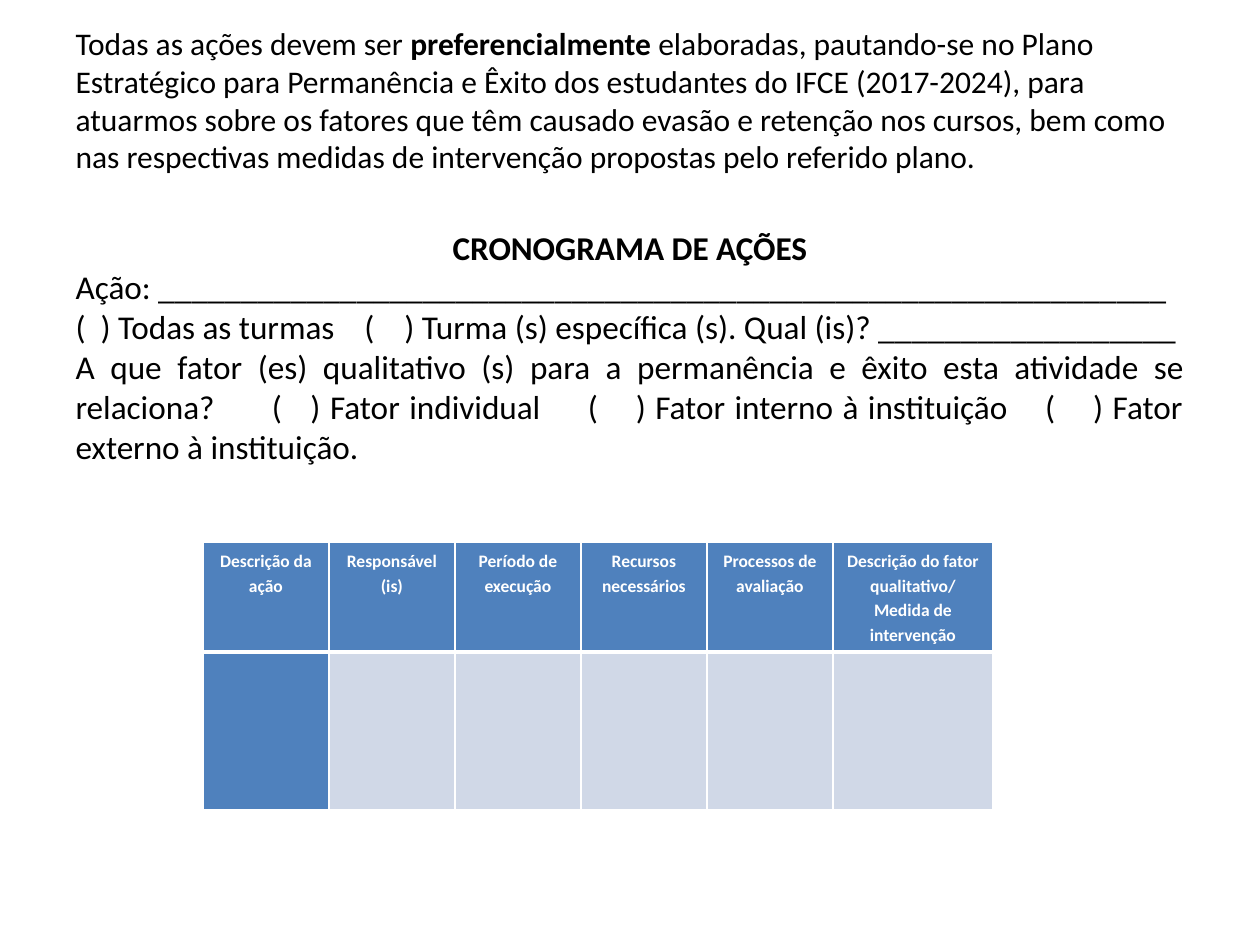
from dataclasses import dataclass

from lxml.etree import SubElement
from pptx import Presentation
from pptx.dml.color import RGBColor
from pptx.enum.text import MSO_ANCHOR as Anchor, MSO_AUTO_SIZE as AutoSize, PP_ALIGN as Align
from pptx.oxml.ns import qn
from pptx.util import Inches, Pt


@dataclass(frozen=True)
class Theme:
    font: str = "Calibri"
    text: str = "000000"
    light: str = "FFFFFF"
    header: str = "4F81BD"
    band: str = "D0D8E7"
    intro_size: int = 18
    form_size: int = 19
    table_size: int = 10
    thin: float = 0.96
    thick: float = 3


THEME = Theme()
WIDTH, HEIGHT = Inches(10), Inches(7.5)
MARGIN = 0.05  # share of the slide's width

INTRO = [
    ("Todas as ações devem ser ", False),
    ("preferencialmente", True),
    (" elaboradas, pautando-se no Plano Estratégico para Permanência e Êxito dos "
     "estudantes do IFCE (2017-2024), para atuarmos sobre os fatores que têm causado "
     "evasão e retenção nos cursos, bem como nas respectivas medidas de intervenção "
     "propostas pelo referido plano.", False),
]
FORM = [
    (Align.CENTER, "CRONOGRAMA DE AÇÕES", True),
    (Align.LEFT, "Ação: " + "_" * 61, False),
    (Align.LEFT, "(  ) Todas as turmas    (    ) Turma (s) específica (s). Qual (is)? "
     + "_" * 18, False),
    (Align.JUSTIFY, "A que fator (es) qualitativo (s) para a permanência e êxito esta "
     "atividade se relaciona?      (   ) Fator individual     (    ) Fator interno à "
     "instituição    (    ) Fator externo à instituição.", False),
]
HEADINGS = [
    "Descrição da ação", "Responsável (is)", "Período de execução",
    "Recursos necessários", "Processos de avaliação",
    "Descrição do fator qualitativo/ Medida de intervenção",
]
COLUMN_WIDTHS = [1] * 5 + [1.27]
ROW_HEIGHTS = [0.87, 1.25]


def add_span(para, text, size, color, bold=False):
    span = para.add_run()
    span.text = text
    font = span.font
    font.name, font.size, font.bold = THEME.font, Pt(size), bold
    font.color.rgb = RGBColor.from_string(color)


def place(box, top, height, anchor):
    """Put a placeholder between the margins; top and height are shares of the slide."""
    box.left, box.width = int(WIDTH * MARGIN), int(WIDTH * (1 - 2 * MARGIN))
    box.top, box.height = int(HEIGHT * top), int(HEIGHT * height)
    frame = box.text_frame
    frame.word_wrap, frame.auto_size = True, AutoSize.NONE
    frame.vertical_anchor = anchor
    return frame


def remove_bullet(para):
    properties = para._p.get_or_add_pPr()
    properties.set("marL", "0")
    properties.set("indent", "0")
    SubElement(properties, qn("a:buNone"))


def fill_intro(box):
    frame = place(box, 0.04, 1 / 6, Anchor.MIDDLE)
    frame.margin_bottom = Inches(0.32)
    para = frame.paragraphs[0]
    para.alignment = Align.LEFT
    for text, bold in INTRO:
        add_span(para, text, THEME.intro_size, THEME.text, bold)


def fill_form(box):
    frame = place(box, 7 / 30, 0.66, Anchor.TOP)
    for index, (align, text, bold) in enumerate(FORM):
        para = frame.add_paragraph() if index else frame.paragraphs[0]
        para.alignment, para.space_before = align, Pt(0)
        remove_bullet(para)
        add_span(para, text, THEME.form_size, THEME.text, bold)


def style_cell(cell, fill, **widths):
    """Set the cell's insets, its fill and the border width of each side (L, R, T, B)."""
    cell.margin_left = cell.margin_right = Inches(0.07)
    properties = cell._tc.get_or_add_tcPr()
    for side in "LRTB":
        width = Pt(widths.get(side, THEME.thin))
        line = SubElement(properties, qn(f"a:ln{side}"), w=str(width))
        SubElement(SubElement(line, qn("a:solidFill")), qn("a:srgbClr"), val=THEME.light)
    cell.fill.solid()
    cell.fill.fore_color.rgb = RGBColor.from_string(fill)


def add_schedule(page):
    frame = page.shapes.add_table(
        len(ROW_HEIGHTS), len(HEADINGS), Inches(1.61), Inches(4.3),
        Inches(sum(COLUMN_WIDTHS)), Inches(sum(ROW_HEIGHTS)))
    table = frame.table
    for row, height in zip(table.rows, ROW_HEIGHTS):
        row.height = Inches(height)
    for index, (heading, width) in enumerate(zip(HEADINGS, COLUMN_WIDTHS)):
        table.columns[index].width = Inches(width)
        top, bottom = table.cell(0, index), table.cell(1, index)
        style_cell(top, THEME.header, B=THEME.thick)
        style_cell(bottom, THEME.band if index else THEME.header, T=THEME.thick)
        para = top.text_frame.paragraphs[0]
        para.alignment, para.line_spacing = Align.CENTER, 1.15
        add_span(para, heading, THEME.table_size, THEME.light, bold=True)


def main():
    deck = Presentation()
    deck.slide_width, deck.slide_height = WIDTH, HEIGHT
    page = deck.slides.add_slide(deck.slide_layouts.get_by_name("Title and Content"))
    fill_intro(page.shapes.title)
    fill_form(page.placeholders[1])
    add_schedule(page)
    deck.save("out.pptx")


if __name__ == "__main__":
    main()
